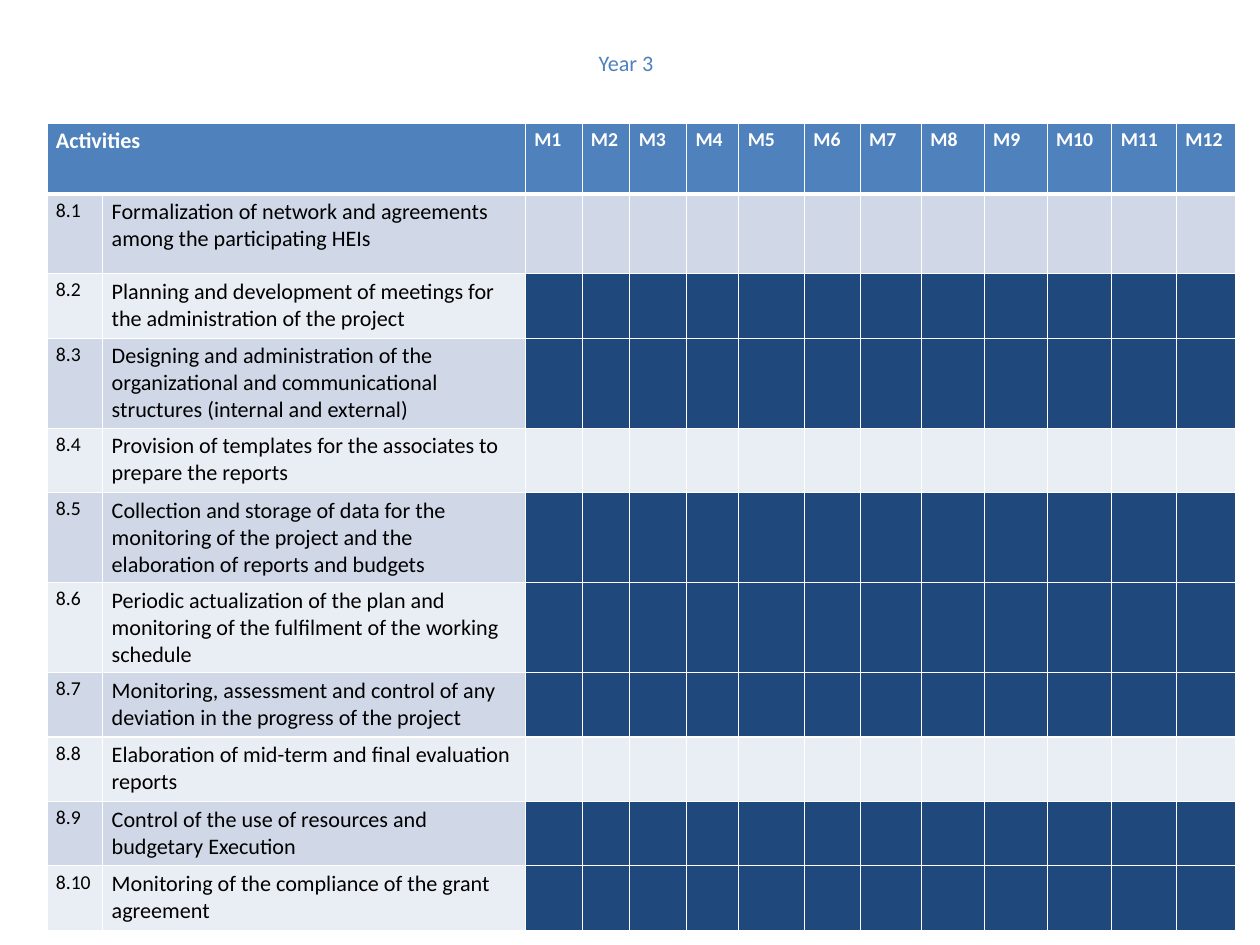
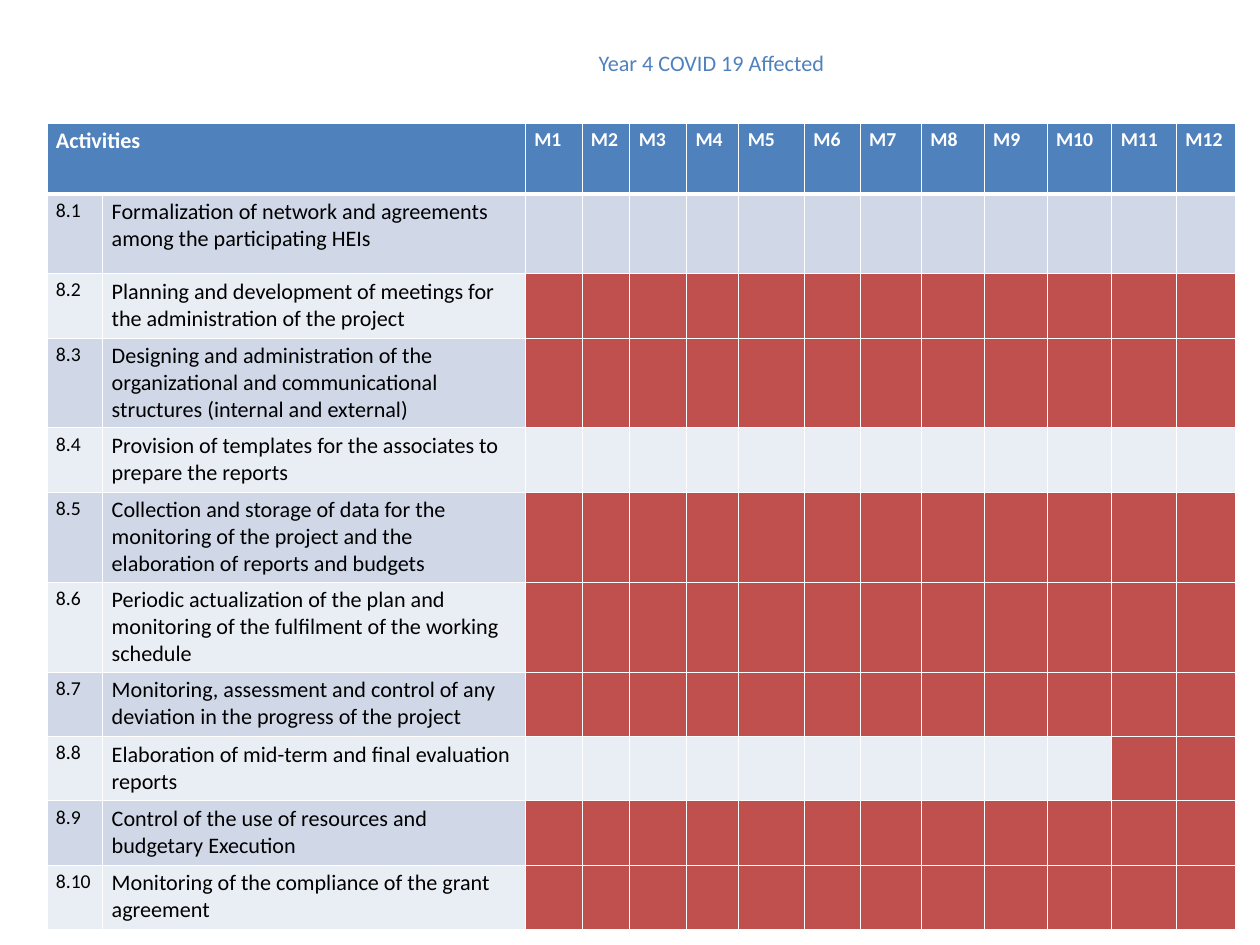
from dataclasses import dataclass

from lxml.etree import SubElement
from pptx import Presentation
from pptx.dml.color import RGBColor as Color
from pptx.oxml.ns import qn
from pptx.util import Pt


@dataclass(frozen=True)
class Theme:
    font: str = "Calibri"
    accent: str = "4F81BD"
    white: str = "FFFFFF"
    black: str = "000000"
    odd_band: str = "D0D8E8"
    even_band: str = "E9EDF4"
    navy: str = "1F497D"
    red: str = "C0504D"
    text_size: float = 18
    label_size: float = 16
    thin_border: float = 1
    header_border: float = 3


theme = Theme()

MONTHS = range(1, 13)
COLUMN_WIDTHS = [45.4, 343.4, 46.1, 38.9, 46.1, 42.5, 53.3,
                 45.4, 49.7, 51.1, 51.1, 52.6, 52.6, 48.2]
HEADER_HEIGHT = 57.6
FIRST_ROW, TWO_LINES, THREE_LINES = 64.8, 52.4, 73
ACTIVITIES = [
    ("Formalization of network and agreements among the participating HEIs", FIRST_ROW),
    ("Planning and development of meetings for the administration of the project", TWO_LINES),
    ("Designing and administration of the organizational and communicational "
     "structures (internal and external)", THREE_LINES),
    ("Provision of templates for the associates to prepare the reports", TWO_LINES),
    ("Collection and storage of data for the monitoring of the project and the "
     "elaboration of reports and budgets", THREE_LINES),
    ("Periodic actualization of the plan and monitoring of the fulfilment of the "
     "working schedule", THREE_LINES),
    ("Monitoring, assessment and control of any deviation in the progress of the project",
     TWO_LINES),
    ("Elaboration of mid-term and final evaluation reports", TWO_LINES),
    ("Control of the use of resources and budgetary Execution", TWO_LINES),
    ("Monitoring of the compliance of the grant agreement", TWO_LINES),
]
ROW_HEIGHTS = [HEADER_HEIGHT] + [height for _, height in ACTIVITIES]

# Months of work per activity number; activities not listed run all year.
YEARS = [
    ("Year 3", theme.navy, {1: (), 4: (), 8: ()}),
    ("Year 4 COVID 19 Affected", theme.red, {1: (), 4: (), 8: (11, 12)}),
]


def write(text_frame, text, size, color, bold=False):
    paragraph = text_frame.paragraphs[0]
    run = paragraph.add_run()
    run.text = text
    font_format = {"name": theme.font, "size": Pt(size), "bold": bold}
    for name, value in font_format.items():
        setattr(run.font, name, value)
    run.font.color.rgb = Color.from_string(color)


def paint(cell, fill, top, bottom):
    """Give the cell white borders, then its fill, in the order the schema asks for."""
    properties = cell._tc.get_or_add_tcPr()
    widths = {"L": theme.thin_border, "R": theme.thin_border, "T": top, "B": bottom}
    for side, width in widths.items():
        line = SubElement(properties, qn(f"a:ln{side}"), w=str(Pt(width)))
        line_fill = SubElement(line, qn("a:solidFill"))
        SubElement(line_fill, qn("a:srgbClr"), val=theme.white)
    cell.fill.solid()
    cell.fill.fore_color.rgb = Color.from_string(fill)


presentation = Presentation()
presentation.slide_width = Pt(1024)
presentation.slide_height = Pt(768)
blank_layout = presentation.slide_layouts[6]

for title, work_color, exceptions in YEARS:
    slide = presentation.slides.add_slide(blank_layout)

    table = slide.shapes.add_table(
        len(ROW_HEIGHTS), len(COLUMN_WIDTHS), Pt(38.2), Pt(100),
        Pt(sum(COLUMN_WIDTHS)), Pt(sum(ROW_HEIGHTS))).table
    table.horz_banding = False
    for column, width in zip(table.columns, COLUMN_WIDTHS):
        column.width = Pt(width)
    for row, height in zip(table.rows, ROW_HEIGHTS):
        row.height = Pt(height)

    for cell in table.rows[0].cells:
        paint(cell, theme.accent, theme.thin_border, theme.header_border)
    table.cell(0, 0).merge(table.cell(0, 1))
    write(table.cell(0, 0).text_frame, "Activities", theme.text_size, theme.white, bold=True)
    for month in MONTHS:
        write(table.cell(0, month + 1).text_frame, f"M{month}",
              theme.label_size, theme.white, bold=True)

    for number, (activity, _) in enumerate(ACTIVITIES, start=1):
        band = theme.odd_band if number % 2 else theme.even_band
        top = theme.header_border if number == 1 else theme.thin_border
        work_months = exceptions.get(number, MONTHS)
        for column_index, cell in enumerate(table.rows[number].cells):
            works = column_index - 1 in work_months
            paint(cell, work_color if works else band, top, theme.thin_border)
        write(table.cell(number, 0).text_frame, f"8.{number}", theme.label_size, theme.black)
        write(table.cell(number, 1).text_frame, activity, theme.text_size, theme.black)

    title_box = slide.shapes.add_textbox(Pt(479.5), Pt(36.7), Pt(525.6), Pt(29))
    title_box.text_frame.word_wrap = True
    write(title_box.text_frame, title, theme.text_size, theme.accent)

presentation.save("out.pptx")
